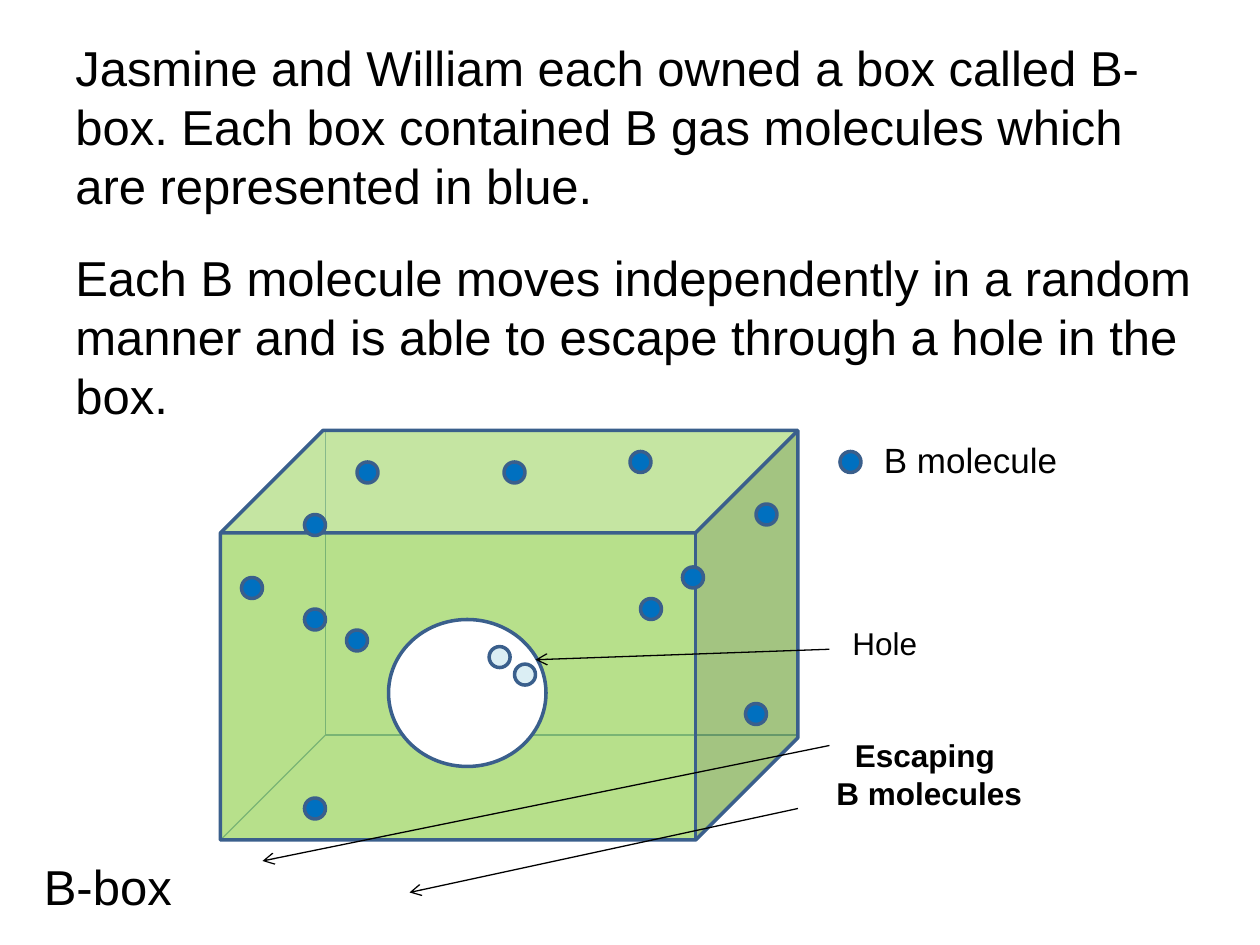
from lxml.etree import SubElement
from pptx import Presentation
from pptx.dml.color import RGBColor
from pptx.enum.shapes import MSO_CONNECTOR as Connector, MSO_SHAPE as Preset
from pptx.enum.text import PP_ALIGN as Align
from pptx.oxml.ns import qn
from pptx.util import Pt

COLORS = {
    "ink": "000000", "hole": "FFFFFF", "box": "92D050", "outline": "3A5F8C",
    "hidden edge": "4B7EBC", "molecule": "0070C0", "escaping": "DBEEF4",
}


def add_preset(preset, left, top, width, height, color):
    shape = page.shapes.add_shape(preset, Pt(left), Pt(top), Pt(width), Pt(height))
    shape.shadow.inherit = False
    shape.fill.solid()
    shape.fill.fore_color.rgb = RGBColor.from_string(COLORS[color])
    shape.line.color.rgb = RGBColor.from_string(COLORS["outline"])
    shape.line.width = Pt(2)
    return shape


def add_line(start, end, color):
    line = page.shapes.add_connector(Connector.STRAIGHT, *map(Pt, start + end))
    line.line.color.rgb = RGBColor.from_string(COLORS[color])
    line.line.width = Pt(0.75)
    SubElement(line._element.spPr, qn("a:effectLst"))
    return line


deck = Presentation()
deck.slide_width, deck.slide_height = Pt(720), Pt(540)
page = deck.slides.add_slide(deck.slide_layouts[6])

# Box: the hidden edges meet in the back corner and show through the front
back_corner = (186, 420)
for edge_end in [(126, 480), (456, 420), (186, 246)]:
    add_line(back_corner, edge_end, "hidden edge")
cube = add_preset(Preset.CUBE, 126, 246, 330, 234, "box")
cube_color = cube.fill._xPr.find(qn("a:solidFill"))[0]
SubElement(cube_color, qn("a:alpha"), val="66000")
add_preset(Preset.OVAL, 222, 354, 90, 84, "hole")

# Molecules, the one at (480, 258) being the key
molecules = {
    "molecule": [
        (174, 348), (360, 258), (366, 342), (198, 360), (426, 402), (138, 330),
        (432, 288), (204, 264), (288, 264), (480, 258), (390, 324), (174, 294),
        (174, 456),
    ],
    "escaping": [(279.5, 369.5), (294, 379.5)],
}
for color, places in molecules.items():
    for left, top in places:
        add_preset(Preset.OVAL, left, top, 12, 12, color)

# Arrows
for start, end in [((474, 371), (306, 377)), ((456, 462), (234, 510)),
                   ((474, 426), (150, 492))]:
    arrow = add_line(start, end, "ink")
    SubElement(arrow.line._get_or_add_ln(), qn("a:tailEnd"), type="arrow")

# Text: lines, (left, top, width, height), size, bold, alignment
texts = [
    (["Jasmine and William each owned a box called B-box. Each box contained "
      "B gas molecules which are represented in blue."],
     (36, 18, 642, 114), 28, False, Align.LEFT),
    (["Each B molecule moves independently in a random manner and is able to "
      "escape through a hole in the box."],
     (36, 138, 660, 72), 28, False, Align.LEFT),
    (["B molecule"], (498, 247, 222, 29), 20, False, Align.LEFT),
    (["Hole"], (480, 353, 60, 30), 18, False, Align.LEFT),
    (["Escaping ", "B molecules"], (381, 417, 300, 66), 18, True, Align.CENTER),
    (["B-box"], (18, 486, 96, 41), 28, False, Align.LEFT),
]
for lines, bounds, size, bold, alignment in texts:
    box = page.shapes.add_textbox(*map(Pt, bounds))
    frame = box.text_frame
    frame.word_wrap = True
    for number, line in enumerate(lines):
        para = frame.add_paragraph() if number else frame.paragraphs[0]
        para.alignment = alignment
        span = para.add_run()
        span.text = line
        for name, value in {"name": "Arial", "size": Pt(size), "bold": bold}.items():
            setattr(span.font, name, value)
        span.font.color.rgb = RGBColor.from_string(COLORS["ink"])

deck.save("out.pptx")
